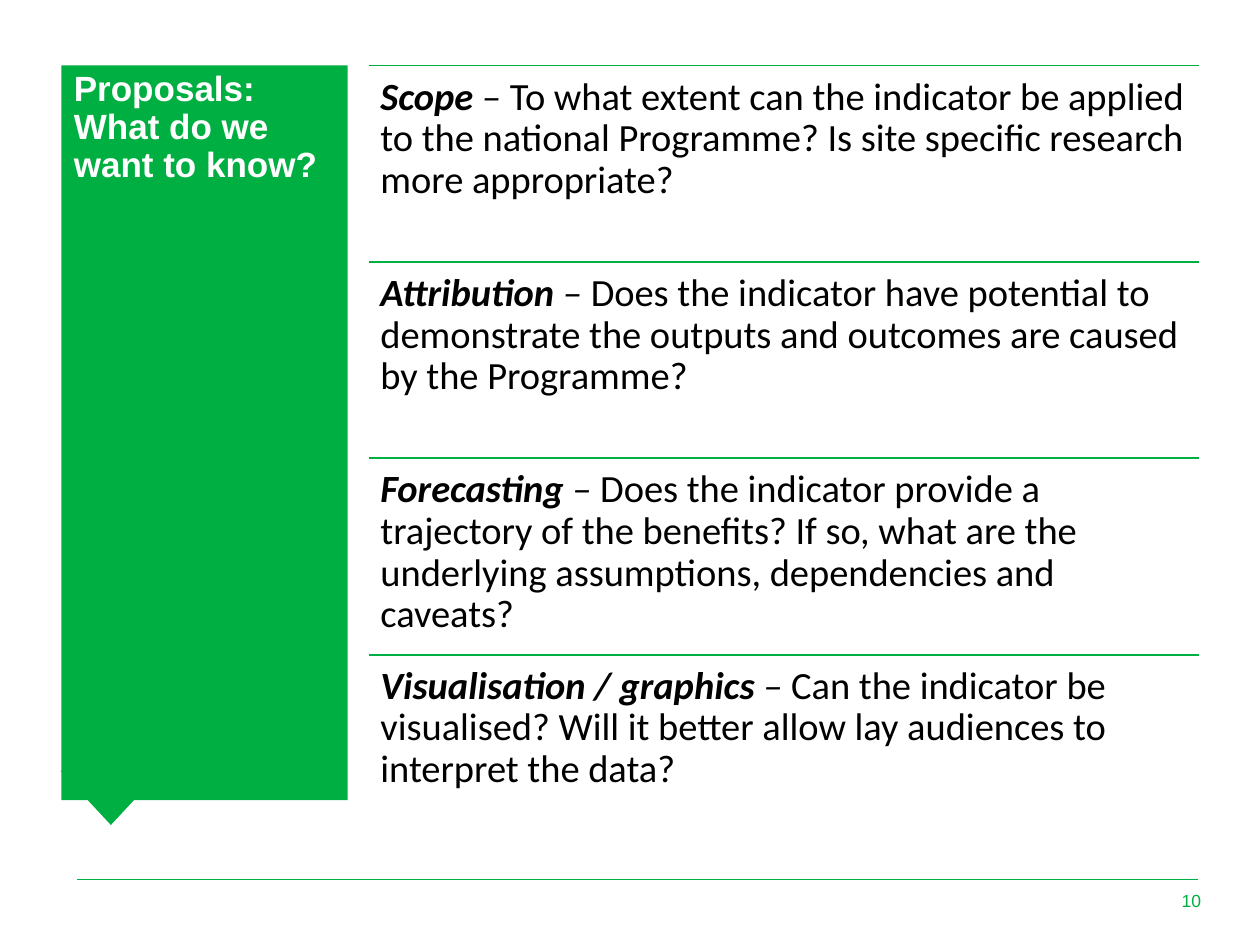
from lxml.etree import SubElement
from pptx import Presentation
from pptx.dml.color import RGBColor
from pptx.enum.shapes import MSO_CONNECTOR, MSO_SHAPE
from pptx.enum.text import MSO_ANCHOR, PP_ALIGN
from pptx.oxml.ns import qn
from pptx.util import Cm, Pt

GREEN = RGBColor(0x00, 0xAF, 0x41)
WHITE = RGBColor(0xFF, 0xFF, 0xFF)
BLACK = RGBColor(0x00, 0x00, 0x00)

LIST_LEFT, LIST_TOP, LIST_WIDTH, ROW_HEIGHT = 7.44, 1.32, 16.74, 3.96

QUESTIONS = [
    ("Scope", "To what extent can the indicator be applied to the national Programme? "
     "Is site specific research more appropriate?"),
    ("Attribution", "Does the indicator have potential to demonstrate the outputs "
     "and outcomes are caused by the Programme?"),
    ("Forecasting", "Does the indicator provide a trajectory of the benefits? If so, "
     "what are the underlying assumptions, dependencies and caveats?"),
    ("Visualisation / graphics", "Can the indicator be visualised? Will it better allow "
     "lay audiences to interpret the data?"),
]


def add_run(paragraph, text, size, color, font="Arial", bold=False, italic=False):
    """Append a formatted run to the paragraph."""
    run = paragraph.add_run()
    run.text = text
    run.font.name = font
    run.font.size = Pt(size)
    run.font.bold = bold
    run.font.italic = italic
    run.font.color.rgb = color


def add_rule(slide, left, top, width, weight):
    """Draw a horizontal green line."""
    line = slide.shapes.add_connector(
        MSO_CONNECTOR.STRAIGHT, Cm(left), Cm(top), Cm(left + width), Cm(top))
    line.line.color.rgb = GREEN
    line.line.width = Pt(weight)
    SubElement(line._element.spPr, qn("a:effectLst"))


def add_block(slide, kind, left, top, width, height):
    """Draw a plain green shape."""
    shape = slide.shapes.add_shape(kind, Cm(left), Cm(top), Cm(width), Cm(height))
    shape.shadow.inherit = False
    shape.fill.solid()
    shape.fill.fore_color.rgb = GREEN
    shape.line.fill.background()
    return shape


def add_text_box(slide, left, top, width, height):
    """Add a wrapping text box and return its text frame."""
    box = slide.shapes.add_textbox(Cm(left), Cm(top), Cm(width), Cm(height))
    box.text_frame.word_wrap = True
    return box.text_frame


def add_heading(slide, text):
    """Draw the green speech panel with its heading."""
    pointer = add_block(slide, MSO_SHAPE.ISOSCELES_TRIANGLE, 1.22, 15.54, 2.03, 1.09)
    pointer.rotation = 180
    frame = add_block(slide, MSO_SHAPE.RECTANGLE, 1.24, 1.32, 5.77, 14.81).text_frame
    frame.word_wrap = True
    frame.vertical_anchor = MSO_ANCHOR.TOP
    paragraph = frame.paragraphs[0]
    paragraph.alignment = PP_ALIGN.LEFT
    paragraph.line_spacing = 0.9
    paragraph.space_before = Pt(10)
    add_run(paragraph, text, 20, WHITE, bold=True)


def add_question(slide, top, topic, question):
    """Add one ruled row with its topic and question."""
    add_rule(slide, LIST_LEFT, top, LIST_WIDTH, 1)
    frame = add_text_box(slide, LIST_LEFT, top, LIST_WIDTH, ROW_HEIGHT)
    frame.margin_left = frame.margin_right = Cm(0.23)
    frame.margin_top = frame.margin_bottom = Cm(0.23)
    paragraph = frame.paragraphs[0]
    paragraph.line_spacing = 0.9
    paragraph.space_after = Pt(7.7)
    add_run(paragraph, topic, 22, BLACK, font="Calibri", bold=True, italic=True)
    add_run(paragraph, " – ", 22, BLACK, font="Calibri", italic=True)
    add_run(paragraph, question, 22, BLACK, font="Calibri")


def add_footer(slide, number):
    """Add the footer line and the page number."""
    add_rule(slide, 1.55, 17.73, 22.61, 0.5)
    frame = add_text_box(slide, 23.32, 17.65, 1.14, 1.02)
    frame.vertical_anchor = MSO_ANCHOR.MIDDLE
    paragraph = frame.paragraphs[0]
    paragraph.alignment = PP_ALIGN.RIGHT
    paragraph.space_after = Pt(6)
    add_run(paragraph, number, 10, GREEN)


def main():
    """Build and save the slide."""
    presentation = Presentation()
    presentation.slide_width, presentation.slide_height = Cm(25.4), Cm(19.05)
    slide = presentation.slides.add_slide(presentation.slide_layouts[6])
    add_footer(slide, "10")
    add_heading(slide, "Proposals: What do we want to know?")
    for row, (topic, question) in enumerate(QUESTIONS):
        add_question(slide, LIST_TOP + row * ROW_HEIGHT, topic, question)
    presentation.save("out.pptx")


if __name__ == "__main__":
    main()
